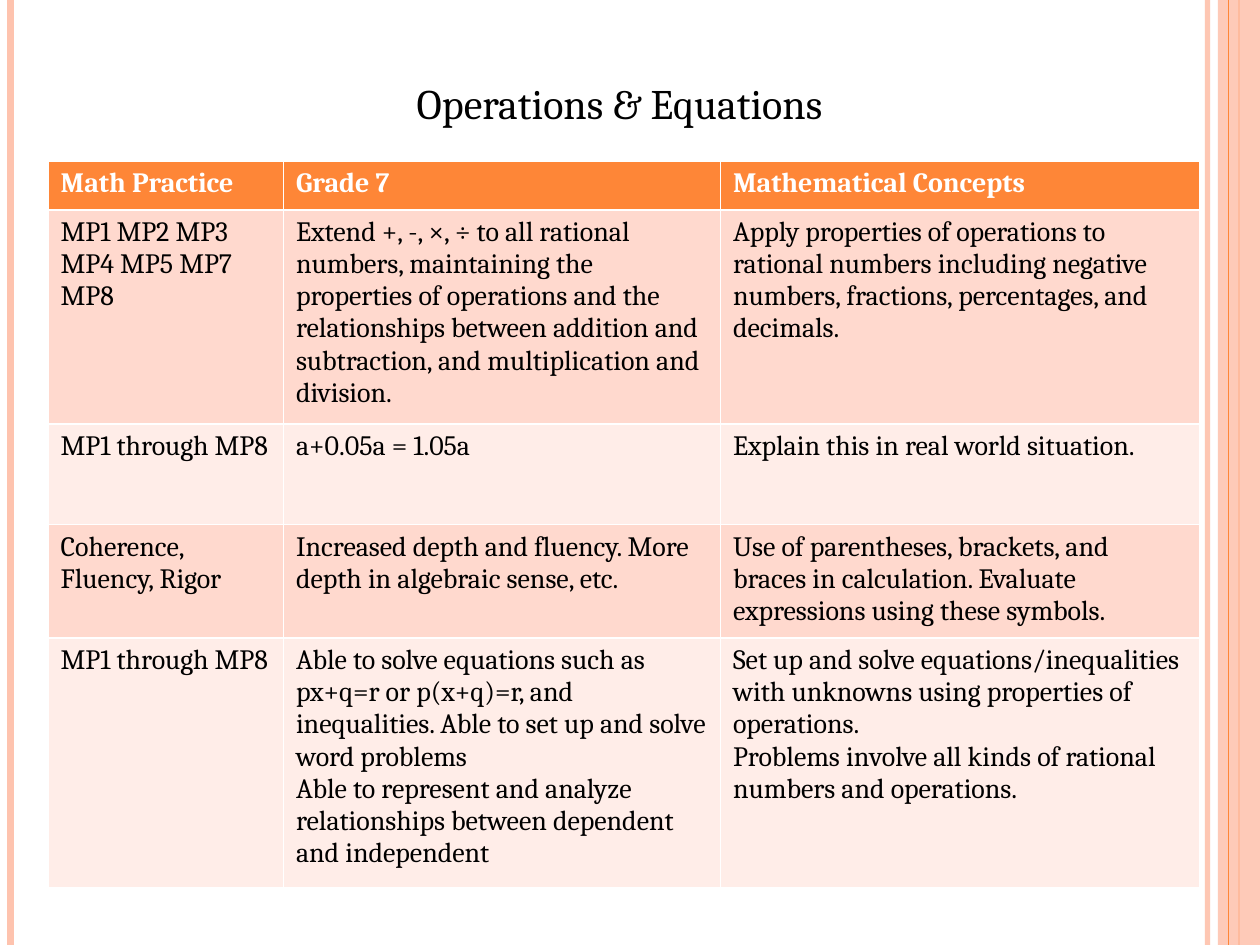
from dataclasses import dataclass

from lxml.etree import SubElement
from pptx import Presentation
from pptx.dml.color import RGBColor
from pptx.enum.shapes import MSO_CONNECTOR, MSO_SHAPE
from pptx.enum.text import MSO_ANCHOR, PP_ALIGN
from pptx.oxml.ns import qn
from pptx.util import Pt


@dataclass(frozen=True)
class Theme:
    """Colours, font and type sizes of the slide."""

    orange: RGBColor = RGBColor(0xFE, 0x86, 0x37)
    peach: RGBColor = RGBColor(0xFE, 0xC3, 0xAE)
    bands: tuple = (RGBColor(0xFF, 0xD9, 0xCE), RGBColor(0xFF, 0xED, 0xE8))
    ink: RGBColor = RGBColor(0, 0, 0)
    white: RGBColor = RGBColor(0xFF, 0xFF, 0xFF)
    font: str = "Cambria"
    title_size: int = 24
    table_size: int = 16


THEME = Theme()
SLIDE_WIDTH, SLIDE_HEIGHT = 720, 540
COLUMN_WIDTHS = (134.5, 249.75, 274)
ROW_HEIGHTS = (28, 122, 57.5, 64.5, 142.5)
ROWS = (
    ("Math Practice", "Grade 7", "Mathematical Concepts"),
    (
        "MP1 MP2 MP3 MP4 MP5 MP7 MP8",
        "Extend +, -, ×, ÷ to all rational numbers, maintaining the properties of "
        "operations and the relationships between addition and subtraction, and "
        "multiplication and division.",
        "Apply properties of operations to rational numbers including negative "
        "numbers, fractions, percentages, and decimals.",
    ),
    ("MP1 through MP8", "a+0.05a = 1.05a", "Explain this in real world situation."),
    (
        "Coherence, Fluency, Rigor",
        "Increased depth and fluency. More depth in algebraic sense, etc.",
        "Use of parentheses, brackets, and braces in calculation. Evaluate "
        "expressions using these symbols.",
    ),
    (
        "MP1 through MP8",
        "Able to solve equations such as px+q=r or p(x+q)=r, and inequalities. "
        "Able to set up and solve word problems\n"
        "Able to represent and analyze relationships between dependent and independent",
        "Set up and solve equations/inequalities with unknowns using properties of "
        "operations.\n"
        "Problems involve all kinds of rational numbers and operations.",
    ),
)


def style_text(text_frame, size, color, bold=False):
    """Format every run of a text frame."""
    for paragraph in text_frame.paragraphs:
        for run in paragraph.runs:
            run.font.name = THEME.font
            run.font.size = Pt(size)
            run.font.bold = bold
            run.font.color.rgb = color


def set_opacity(shape, percent):
    """Make the solid colour of a shape or line partly transparent."""
    color = next(shape._element.spPr.iter(qn("a:srgbClr")))
    SubElement(color, qn("a:alpha")).set("val", str(percent * 1000))


def add_rule(slide, x, top, height, color, weight):
    """Draw a vertical rule."""
    rule = slide.shapes.add_connector(
        MSO_CONNECTOR.STRAIGHT, Pt(x), Pt(top), Pt(x), Pt(top + height)
    )
    rule.line.color.rgb = color
    rule.line.width = Pt(weight)
    SubElement(rule._element.spPr, qn("a:effectLst"))
    return rule


def add_frame(slide, left, top, width, height):
    """Draw the rules and the band along both side edges of the box."""
    right = left + width
    set_opacity(add_rule(slide, right - 30, top, height, THEME.peach, 3), 93)
    add_rule(slide, left + 6, top, height, THEME.peach, 4.5)
    add_rule(slide, right - 12, top, height, THEME.orange, 1.5)
    band = slide.shapes.add_shape(
        MSO_SHAPE.RECTANGLE, Pt(right - 24), Pt(top), Pt(24), Pt(height)
    )
    band.shadow.inherit = False
    band.fill.solid()
    band.fill.fore_color.rgb = THEME.peach
    band.line.fill.background()
    set_opacity(band, 87)
    add_rule(slide, right - 18, top, height, THEME.orange, 0.75)


def add_title(slide, left, top, width, height):
    """Place the centred title in the box."""
    text_frame = slide.shapes.add_textbox(
        Pt(left), Pt(top), Pt(width), Pt(height)
    ).text_frame
    text_frame.word_wrap = True
    text_frame.vertical_anchor = MSO_ANCHOR.MIDDLE
    text_frame.text = "Operations & Equations"
    text_frame.paragraphs[0].alignment = PP_ALIGN.CENTER
    style_text(text_frame, THEME.title_size, THEME.ink)


def add_standards_table(slide, left, top, width, height):
    """Place the table of practices and concepts in the box."""
    table = slide.shapes.add_table(
        len(ROWS), len(COLUMN_WIDTHS), Pt(left), Pt(top), Pt(width), Pt(height)
    ).table
    for column, column_width in zip(table.columns, COLUMN_WIDTHS):
        column.width = Pt(column_width)
    for index, (row, row_height, texts) in enumerate(zip(table.rows, ROW_HEIGHTS, ROWS)):
        row.height = Pt(row_height)
        is_header = index == 0
        fill_color = THEME.orange if is_header else THEME.bands[(index - 1) % 2]
        text_color = THEME.white if is_header else THEME.ink
        for cell, text in zip(row.cells, texts):
            cell.fill.solid()
            cell.fill.fore_color.rgb = fill_color
            cell.text_frame.text = text
            style_text(cell.text_frame, THEME.table_size, text_color, is_header)


def main():
    """Build and save the slide."""
    presentation = Presentation()
    presentation.slide_width = Pt(SLIDE_WIDTH)
    presentation.slide_height = Pt(SLIDE_HEIGHT)
    slide = presentation.slides.add_slide(presentation.slide_layouts[6])
    add_frame(slide, 0, 0, SLIDE_WIDTH, SLIDE_HEIGHT)
    add_title(slide, 66, 39.5, 576, 38)
    add_standards_table(slide, 27.5, 92, sum(COLUMN_WIDTHS), sum(ROW_HEIGHTS))
    presentation.save("out.pptx")


if __name__ == "__main__":
    main()
